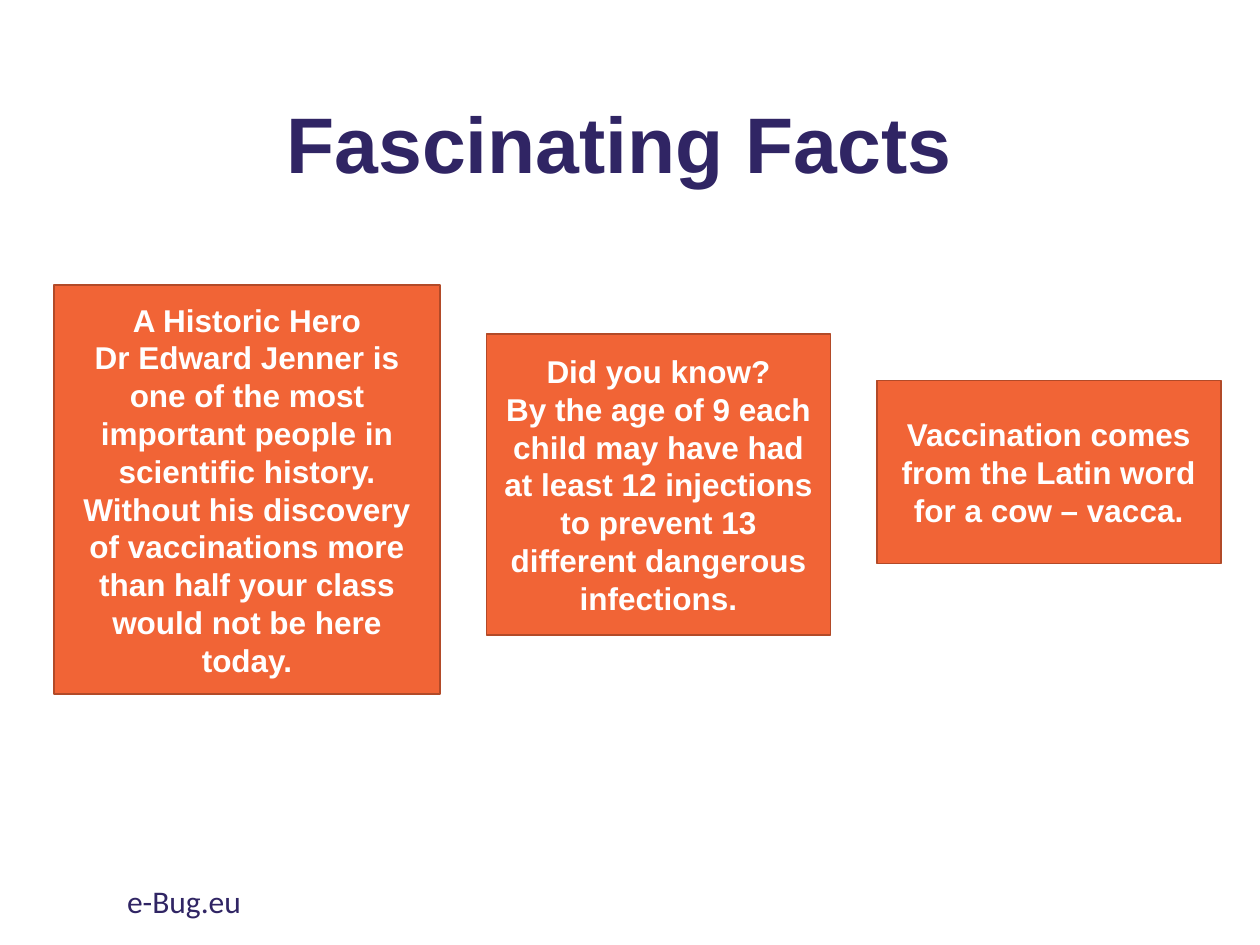
from dataclasses import dataclass

from pptx import Presentation
from pptx.dml.color import RGBColor
from pptx.enum.shapes import MSO_SHAPE
from pptx.enum.text import MSO_ANCHOR, PP_ALIGN
from pptx.slide import Slide
from pptx.text.text import TextFrame
from pptx.util import Pt

RECTANGLE = MSO_SHAPE.RECTANGLE
TOP, MIDDLE = MSO_ANCHOR.TOP, MSO_ANCHOR.MIDDLE
LEFT, CENTER = PP_ALIGN.LEFT, PP_ALIGN.CENTER

NAVY = RGBColor(0x30, 0x25, 0x64)
ORANGE = RGBColor(0xF1, 0x64, 0x36)
RUST = RGBColor(0xB2, 0x4A, 0x28)
WHITE = RGBColor(0xFF, 0xFF, 0xFF)


@dataclass(frozen=True)
class Box:
    left: float
    top: float
    width: float
    height: float

    def lengths(self) -> tuple[Pt, Pt, Pt, Pt]:
        return Pt(self.left), Pt(self.top), Pt(self.width), Pt(self.height)


@dataclass(frozen=True)
class FactCard:
    box: Box
    text: str


FACTS = [
    FactCard(
        Box(31, 162.7, 220.3, 234),
        "A Historic Hero\n"
        "Dr Edward Jenner is one of the most\n"
        "important people in\n"
        "scientific history.\n"
        "Without his discovery of vaccinations more\n"
        "than half your class would not be here today.",
    ),
    FactCard(
        Box(278, 190.8, 196.6, 172),
        "Did you know?\v"
        "By the age of 9 each child may have had at least 12 injections "
        "to prevent 13 different dangerous infections.",
    ),
    FactCard(
        Box(501, 217.4, 196.6, 104.6),
        "Vaccination comes\nfrom the Latin word\nfor a cow – vacca.",
    ),
]


def write_text(tf: TextFrame, text: str, *, size: float = 18, font: str = "Arial",
               color: RGBColor = NAVY, bold: bool = False, align: PP_ALIGN = CENTER,
               anchor: MSO_ANCHOR = MIDDLE, line_spacing: float = 1.0) -> None:
    """Fill a frame; newlines start paragraphs, vertical tabs break lines."""
    tf.word_wrap = True
    tf.vertical_anchor = anchor
    tf.text = text
    for p in tf.paragraphs:
        p.alignment = align
        p.line_spacing = line_spacing
        for r in p.runs:
            r.font.size = Pt(size)
            r.font.name = font
            r.font.bold = bold
            r.font.color.rgb = color


def add_label(s: Slide, box: Box, text: str, **text_format) -> None:
    sp = s.shapes.add_textbox(*box.lengths())
    write_text(sp.text_frame, text, **text_format)


def add_fact_card(s: Slide, card: FactCard) -> None:
    sp = s.shapes.add_shape(RECTANGLE, *card.box.lengths())
    sp.shadow.inherit = False
    sp.fill.solid()
    sp.fill.fore_color.rgb = ORANGE
    sp.line.color.rgb = RUST
    sp.line.width = Pt(1)
    write_text(sp.text_frame, card.text, color=WHITE, bold=True)


def main() -> None:
    prs = Presentation()
    prs.slide_width, prs.slide_height = Pt(720), Pt(540)
    s = prs.slides.add_slide(prs.slide_layouts[6])

    add_label(s, Box(49.7, 42.5, 620.6, 84.2), "Fascinating Facts ",
              size=45, bold=True, line_spacing=0.9)
    for card in FACTS:
        add_fact_card(s, card)
    add_label(s, Box(65.5, 500.4, 243.4, 28.8), "e-Bug.eu",
              font="Calibri", align=LEFT, anchor=TOP)

    prs.save("out.pptx")


if __name__ == "__main__":
    main()
